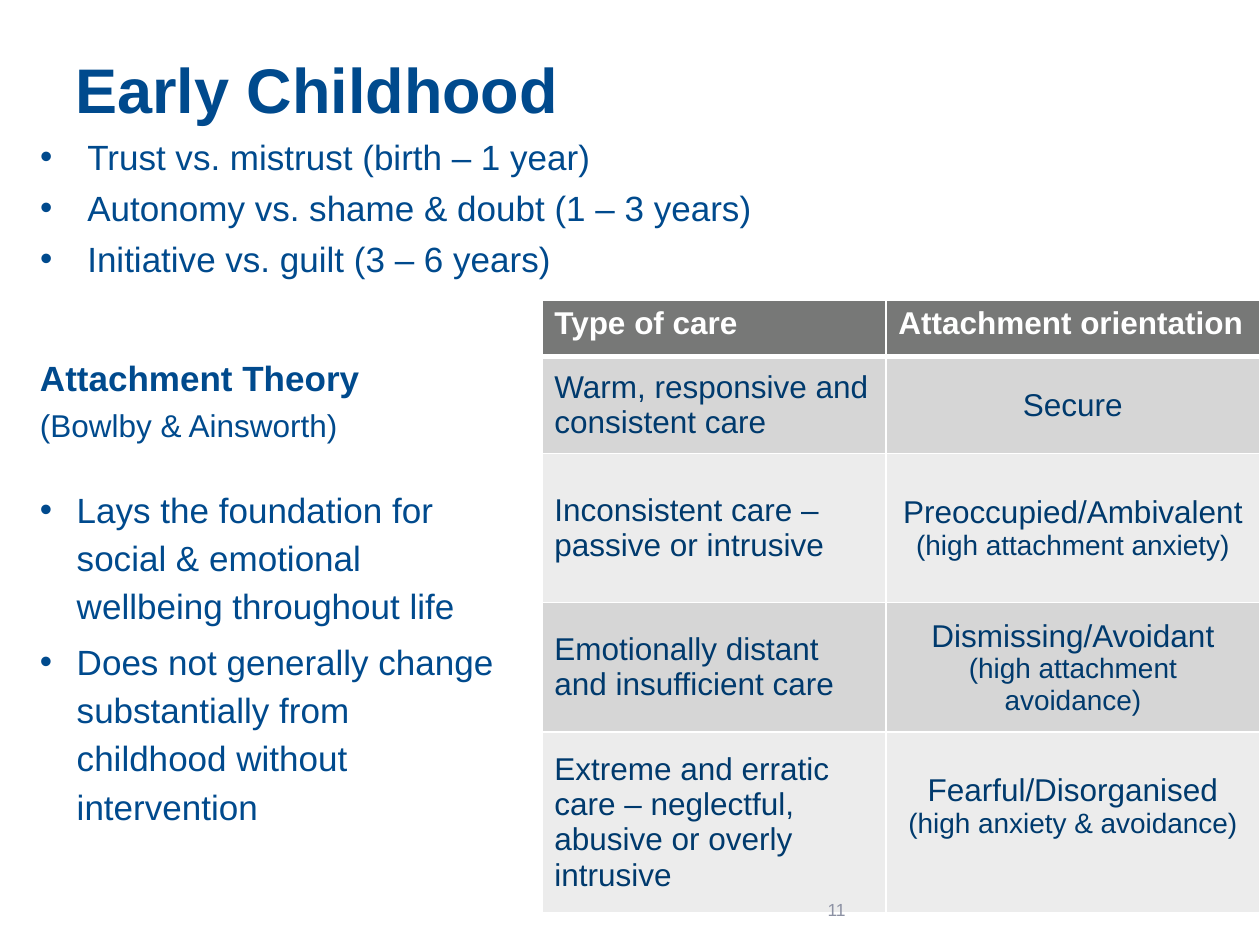
from dataclasses import dataclass

from lxml.etree import SubElement
from pptx import Presentation
from pptx.dml.color import RGBColor as RGB
from pptx.enum.text import MSO_ANCHOR as Anchor, PP_ALIGN as Align
from pptx.oxml.ns import qn
from pptx.util import Pt


@dataclass(frozen=True)
class Theme:
    font: str = "Arial"
    blue: str = "004A8D"
    navy: str = "003A6D"
    white: str = "FFFFFF"
    header: str = "777877"
    bands: tuple = ("D6D6D6", "ECECEC")
    number: str = "8C91A3"
    title: int = 36
    body: int = 20
    cell: int = 18
    detail: int = 16
    small: int = 10


THEME = Theme()


def write(frame, text, size=THEME.body, color=THEME.blue, bold=False,
          align=Align.LEFT, before=0, spacing=None, hang=0):
    """Fill the empty first paragraph of a frame, or append one, with formatted text."""
    paragraph = frame.paragraphs[0] if not frame.text else frame.add_paragraph()
    if hang:
        properties = paragraph._p.get_or_add_pPr()
        properties.set("marL", str(Pt(hang)))
        properties.set("indent", str(-Pt(hang)))
        SubElement(properties, qn("a:buFont"), typeface=THEME.font)
        SubElement(properties, qn("a:buChar"), char="•")
    paragraph.alignment = align
    if before:
        paragraph.space_before = Pt(before)
    if spacing:
        paragraph.line_spacing = spacing
    run = paragraph.add_run()
    run.text = text
    run.font.name = THEME.font
    run.font.size = Pt(size)
    run.font.bold = bold
    run.font.color.rgb = RGB.from_string(color)


class Page:
    """Hold the theme and the current slide, and add its elements."""

    def __init__(self, slide, theme):
        self.slide = slide
        self.theme = theme

    def text_box(self, left, top, width, height, top_inset=3.6, anchor=Anchor.TOP):
        box = self.slide.shapes.add_textbox(Pt(left), Pt(top), Pt(width), Pt(height))
        frame = box.text_frame
        frame.word_wrap = True
        frame.margin_top = Pt(top_inset)
        frame.vertical_anchor = anchor
        return frame

    def table(self, left, top, widths, heights):
        grid = self.slide.shapes.add_table(
            len(heights), len(widths), Pt(left), Pt(top),
            Pt(sum(widths)), Pt(sum(heights))).table
        grid.horz_banding = False
        for column, width in zip(grid.columns, widths):
            column.width = Pt(width)
        for row, height in zip(grid.rows, heights):
            row.height = Pt(height)
        return grid

    def cell(self, cell, fill, borders, anchor):
        properties = cell._tc.get_or_add_tcPr()
        for side, weight in borders.items():
            line = SubElement(properties, qn(f"a:ln{side}"), w=str(Pt(weight)))
            paint = SubElement(line, qn("a:solidFill"))
            SubElement(paint, qn("a:srgbClr"), val=self.theme.white)
        cell.fill.solid()
        cell.fill.fore_color.rgb = RGB.from_string(fill)
        cell.vertical_anchor = anchor
        return cell.text_frame


def add_care_table(page):
    """Pair each type of care with the attachment orientation it leads to."""
    theme = page.theme
    grid = page.table(309.6, 171.4, (196.6, 213.8), (32.4, 55.4, 85, 74.2, 103))
    for column, heading in enumerate(("Type of care", "Attachment orientation")):
        frame = page.cell(grid.cell(0, column), theme.header,
                          dict(L=1, R=1, T=1, B=3), Anchor.TOP)
        write(frame, heading, theme.cell, theme.white, bold=True)

    orientations = (
        ("Warm, responsive and consistent care", "Secure", None),
        ("Inconsistent care – passive or intrusive",
         "Preoccupied/Ambivalent", "(high attachment anxiety)"),
        ("Emotionally distant and insufficient care",
         "Dismissing/Avoidant", "(high attachment avoidance)"),
        ("Extreme and erratic care – neglectful, abusive or overly intrusive",
         "Fearful/Disorganised", "(high anxiety & avoidance)"),
    )
    for row, (care, orientation, detail) in enumerate(orientations, 1):
        fill = theme.bands[(row - 1) % 2]
        borders = dict(L=1, R=1, T=3 if row == 1 else 1, B=1)
        care_frame, orientation_frame = (
            page.cell(grid.cell(row, column), fill, borders, Anchor.MIDDLE)
            for column in range(2))
        write(care_frame, care, theme.cell, theme.navy)
        write(orientation_frame, orientation, theme.cell, theme.navy, align=Align.CENTER)
        if detail:
            write(orientation_frame, detail, theme.detail, theme.navy, align=Align.CENTER)
    grid.cell(len(orientations), 1).margin_bottom = Pt(22)


def main():
    """Build the early childhood slide."""
    deck = Presentation()
    deck.slide_width, deck.slide_height = Pt(720), Pt(540)
    page = Page(deck.slides.add_slide(deck.slide_layouts[6]), THEME)

    title = page.text_box(36, 21.6, 648, 90, top_inset=7.5)
    write(title, "Early Childhood", THEME.title, bold=True)

    stages = page.text_box(15.8, 72.7, 588, 94, top_inset=5)
    for index, stage in enumerate(("Trust vs. mistrust (birth – 1 year)",
                                   "Autonomy vs. shame & doubt (1 – 3 years)",
                                   "Initiative vs. guilt (3 – 6 years)")):
        write(stages, stage, before=5 if index else 0, hang=27)

    add_care_table(page)

    number = page.text_box(414, 509.8, 76.3, 19.4, anchor=Anchor.MIDDLE)
    write(number, "11", THEME.small, THEME.number, align=Align.RIGHT)

    theory = page.text_box(15.8, 179.3, 273.6, 314.6, top_inset=24.5)
    write(theory, "Attachment Theory", bold=True)
    write(theory, "(Bowlby & Ainsworth)", THEME.cell, before=4.5)
    for point, gap in (
            ("Lays the foundation for social & emotional wellbeing throughout life", 21.5),
            ("Does not generally change substantially from childhood without intervention", 4)):
        write(theory, point, before=gap, spacing=1.15, hang=21)

    deck.save("out.pptx")


if __name__ == "__main__":
    main()
